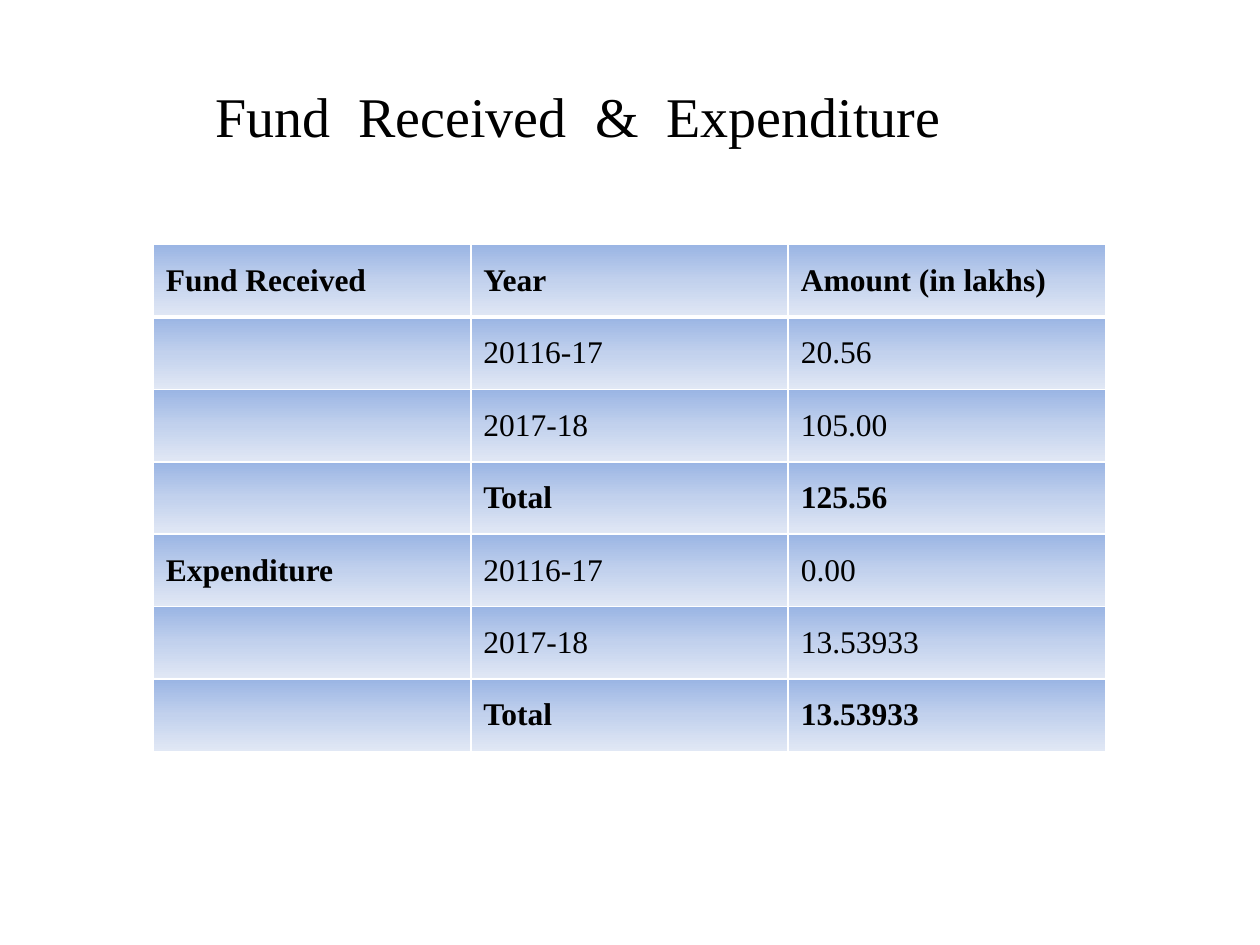
from lxml.etree import SubElement
from pptx import Presentation
from pptx.dml.color import RGBColor
from pptx.enum.text import MSO_ANCHOR
from pptx.oxml.ns import qn
from pptx.util import Pt

TITLE_WORDS = ["Fund", "Received", "&", "Expenditure"]
ROWS = [
    ("Fund Received", "Year", "Amount (in lakhs)"),
    ("", "20116-17", "20.56"),
    ("", "2017-18", "105.00"),
    ("", "Total", "125.56"),
    ("Expenditure", "20116-17", "0.00"),
    ("", "2017-18", "13.53933"),
    ("", "Total", "13.53933"),
]
BOLD_LABELS = {"Fund Received", "Expenditure"}
BOLD_ROWS = {"Year", "Total"}

THEME = {
    "font": "Times New Roman",
    "text": "000000",
    "border": "FFFFFF",
    "gradient": [(0, "9AB5E4"), (50, "C2D1ED"), (100, "E1E8F5")],
    "title_size": 32,
    "cell_size": 18,
    "thin": 1,
    "thick": 3,
}
TITLE_AREA = (115.92, 43.2, 504.72, 46.08)
TABLE_LEFT, TABLE_TOP = 87.6, 139.8
COLUMN_WIDTH, ROW_HEIGHT = 181.44, 41.36
WORD_GAP = 8


def add_span(para, text, size, bold=False):
    span = para.add_run()
    span.text = text
    values = {"name": THEME["font"], "size": Pt(size), "bold": bold}
    for name, value in values.items():
        setattr(span.font, name, value)
    span.font.color.rgb = RGBColor.from_string(THEME["text"])
    return span


def add_color(parent, color):
    SubElement(parent, qn("a:srgbClr"), val=color)


def style_cell(cell, borders):
    """Give the cell its border widths in points and the downward gradient."""
    properties = cell._tc.get_or_add_tcPr()
    for side, width in borders.items():
        line = SubElement(properties, qn(f"a:ln{side}"), w=str(Pt(width)))
        add_color(SubElement(line, qn("a:solidFill")), THEME["border"])
    gradient = SubElement(properties, qn("a:gradFill"), rotWithShape="1")
    stops = SubElement(gradient, qn("a:gsLst"))
    for percent, color in THEME["gradient"]:
        add_color(SubElement(stops, qn("a:gs"), pos=str(percent * 1000)), color)
    SubElement(gradient, qn("a:lin"), ang=str(90 * 60000), scaled="0")


def add_title(page):
    box = page.shapes.add_textbox(*map(Pt, TITLE_AREA))
    box.text_frame.word_wrap = True
    para = box.text_frame.paragraphs[0]
    for index, word in enumerate(TITLE_WORDS):
        if index:
            gap = add_span(para, " ", THEME["title_size"])
            gap.font._element.set("spc", str(WORD_GAP * 100))
        add_span(para, word, THEME["title_size"])


def add_fund_table(page):
    row_count, column_count = len(ROWS), len(ROWS[0])
    frame = page.shapes.add_table(
        row_count, column_count, Pt(TABLE_LEFT), Pt(TABLE_TOP),
        Pt(COLUMN_WIDTH * column_count), Pt(ROW_HEIGHT * row_count))
    table = frame.table
    for column in table.columns:
        column.width = Pt(COLUMN_WIDTH)
    for row_index, texts in enumerate(ROWS):
        table.rows[row_index].height = Pt(ROW_HEIGHT)
        borders = dict.fromkeys("LRTB", THEME["thin"])
        if row_index < 2:
            borders["B" if row_index == 0 else "T"] = THEME["thick"]
        for column_index, text in enumerate(texts):
            cell = table.cell(row_index, column_index)
            cell.vertical_anchor = MSO_ANCHOR.MIDDLE
            style_cell(cell, borders)
            if text:
                bold = text in BOLD_LABELS or texts[1] in BOLD_ROWS
                para = cell.text_frame.paragraphs[0]
                add_span(para, text, THEME["cell_size"], bold)


def main():
    deck = Presentation()
    deck.slide_width, deck.slide_height = Pt(720), Pt(540)
    page = deck.slides.add_slide(deck.slide_layouts[6])
    add_fund_table(page)
    add_title(page)
    deck.save("out.pptx")


if __name__ == "__main__":
    main()
